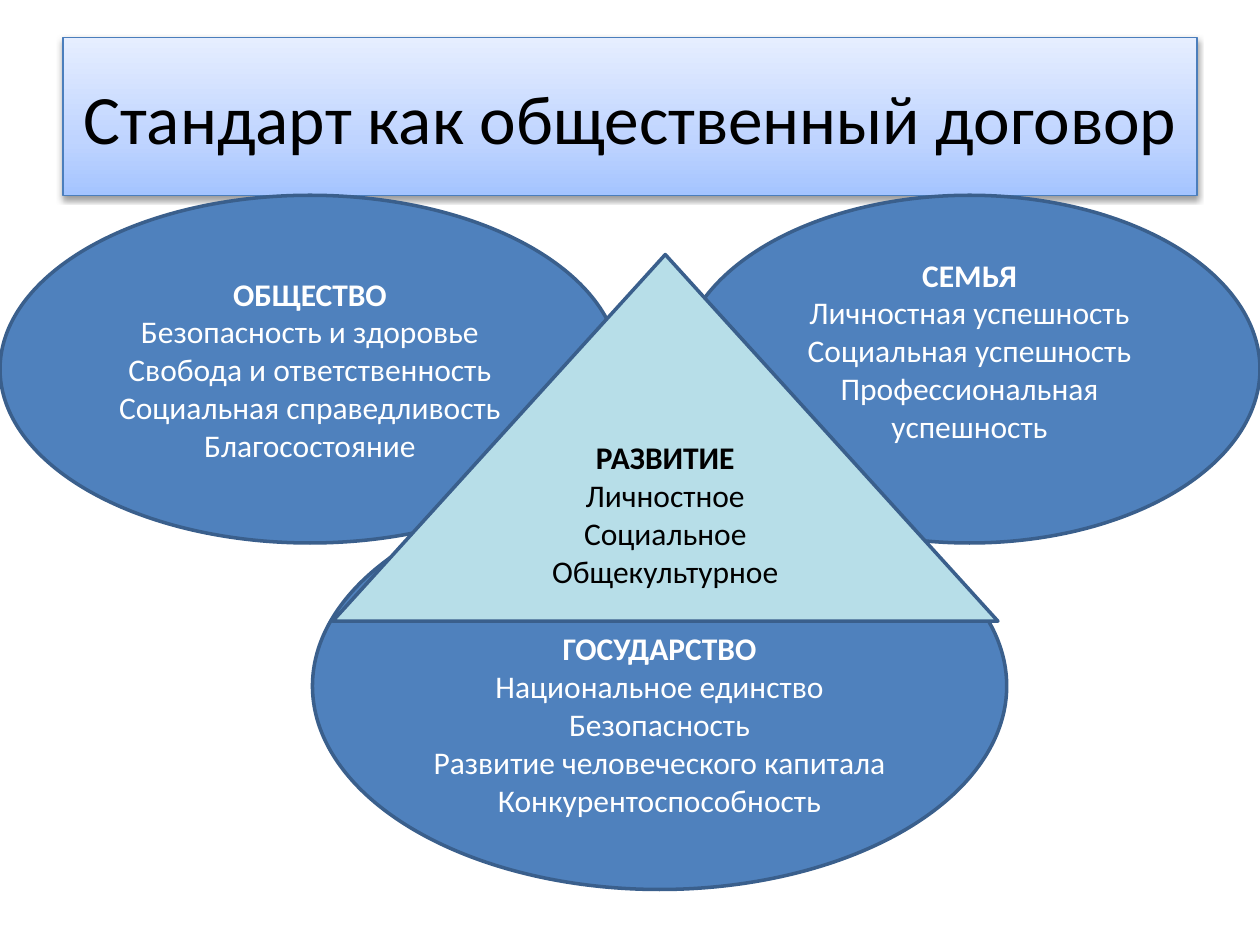
from lxml.etree import SubElement
from pptx import Presentation
from pptx.dml.color import RGBColor
from pptx.enum.shapes import MSO_SHAPE
from pptx.enum.text import MSO_ANCHOR, PP_ALIGN
from pptx.oxml import parse_xml
from pptx.oxml.ns import nsdecls, qn
from pptx.util import Inches, Pt

FONT = "Calibri"
BLUE, EDGE, PALE = "4F81BD", "3A5F8C", "B7DEE8"
BLACK, WHITE = "000000", "FFFFFF"
TITLE_STOPS = [(0, "A4C4FF"), (35, "BFD4FF"), (100, "E6EEFF")]

# heading, lines, box, (top inset, bottom inset)
CIRCLES = [
    ("СЕМЬЯ",
     ["Личностная успешность", "Социальная успешность",
      "Профессиональная успешность"],
     (5.39, 1.55, 4.61, 2.76), (0.05, 0.35)),
    ("ОБЩЕСТВО",
     ["Безопасность и здоровье", "Свобода и ответственность",
      "Социальная справедливость", "Благосостояние"],
     (0, 1.55, 4.92, 2.76), (0.05, 0.05)),
    ("ГОСУДАРСТВО",
     ["Национальное единство", "Безопасность",
      "Развитие человеческого капитала", "Конкурентоспособность"],
     (2.48, 3.83, 5.51, 3.23), (0.65, 0.05)),
]


def rgb(value):
    return RGBColor.from_string(value)


def place(sp, box):
    sp.left, sp.top, sp.width, sp.height = (Inches(v) for v in box)


def set_line(sp, color, width):
    sp.line.color.rgb = rgb(color)
    sp.line.width = Pt(width)


def format_paragraph(p, size, color, bold=False):
    p.alignment = PP_ALIGN.CENTER
    p.font.name = FONT
    p.font.size = Pt(size)
    p.font.bold = bold
    p.font.color.rgb = rgb(color)


def add_gradient_and_shadow(sp, stops):
    """Fill from bottom to top and cast a soft shadow straight down."""
    sp.fill.background()
    sp_pr = sp.fill._xPr
    gs = "".join(f'<a:gs pos="{pos * 1000}"><a:srgbClr val="{color}"/></a:gs>'
                 for pos, color in stops)
    grad = parse_xml(f'<a:gradFill {nsdecls("a")} rotWithShape="1"><a:gsLst>{gs}'
                     '</a:gsLst><a:lin ang="16200000" scaled="0"/></a:gradFill>')
    sp_pr.replace(sp_pr.find(qn("a:noFill")), grad)

    sp.shadow.inherit = False
    shadow = SubElement(sp_pr.find(qn("a:effectLst")), qn("a:outerShdw"),
                        blurRad=str(Pt(3.1)), dist=str(Pt(1.6)),
                        dir="5400000", rotWithShape="0")
    color = SubElement(shadow, qn("a:srgbClr"), val=BLACK)
    SubElement(color, qn("a:alpha"), val="38000")


def add_title(s, text, box):
    sp = s.shapes.title
    place(sp, box)
    set_line(sp, "4B7EBC", 0.75)
    add_gradient_and_shadow(sp, TITLE_STOPS)
    tf = sp.text_frame
    tf.text = text
    tf.vertical_anchor = MSO_ANCHOR.MIDDLE
    format_paragraph(tf.paragraphs[0], 39.6, BLACK)


def add_topic(s, kind, heading, lines, box, insets, fill, color):
    """Add an outlined shape with a bold heading above plain lines."""
    sp = s.shapes.add_shape(kind, *(Inches(v) for v in box))
    sp.shadow.inherit = False
    sp.fill.solid()
    sp.fill.fore_color.rgb = rgb(fill)
    set_line(sp, EDGE, 2)
    tf = sp.text_frame
    tf.word_wrap = True
    tf.vertical_anchor = MSO_ANCHOR.MIDDLE
    tf.margin_top, tf.margin_bottom = (Inches(v) for v in insets)
    tf.text = "\n".join([heading, *lines])
    for i, p in enumerate(tf.paragraphs):
        format_paragraph(p, 18, color, bold=i == 0)


def main():
    prs = Presentation()
    prs.slide_width, prs.slide_height = Inches(10), Inches(7.5)
    s = prs.slides.add_slide(prs.slide_layouts[5])
    add_title(s, "Стандарт как общественный договор", (0.5, 0.3, 9, 1.25))
    for heading, lines, box, insets in CIRCLES:
        add_topic(s, MSO_SHAPE.OVAL, heading, lines, box, insets, BLUE, WHITE)
    add_topic(s, MSO_SHAPE.ISOSCELES_TRIANGLE, "РАЗВИТИЕ",
              ["Личностное", "Социальное", "Общекультурное"],
              (2.64, 2.02, 5.28, 2.91), (0, 0.25), PALE, BLACK)
    prs.save("out.pptx")


if __name__ == "__main__":
    main()
